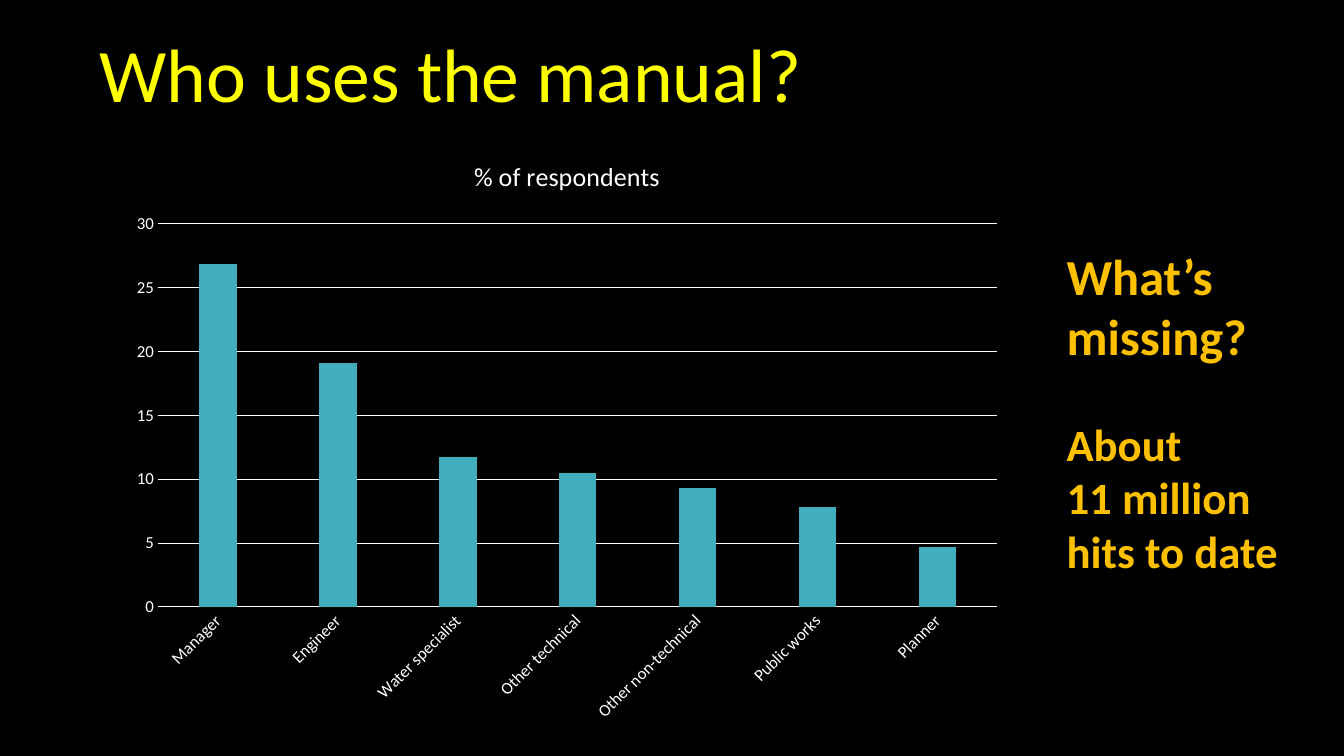
from pptx import Presentation
from pptx.chart.data import CategoryChartData
from pptx.dml.color import RGBColor
from pptx.enum import chart as kinds, text
from pptx.util import Inches, Pt

BLACK = RGBColor(0x00, 0x00, 0x00)
WHITE = RGBColor(0xFF, 0xFF, 0xFF)
YELLOW = RGBColor(0xFF, 0xFF, 0x00)
AMBER = RGBColor(0xFF, 0xC0, 0x00)
TEAL = RGBColor(0x41, 0xAE, 0xBD)

USERS = {
    "Manager": 26.8,
    "Engineer": 19.1,
    "Water specialist": 11.7,
    "Other technical": 10.5,
    "Other non-technical": 9.3,
    "Public works": 7.8,
    "Planner": 4.7,
}


class Deck:
    """Holds the font and the current slide, and adds styled elements."""

    def __init__(self, face):
        self.face = face
        self.show = Presentation()
        self.show.slide_width = Inches(13.33)
        self.show.slide_height = Inches(7.5)
        self.slide = self.show.slides.add_slide(self.show.slide_layouts[6])
        fill = self.slide.background.fill
        fill.solid()
        fill.fore_color.rgb = BLACK

    def style(self, font, size, color, bold=False):
        font.name = self.face
        font.size = Pt(size)
        font.color.rgb = color
        font.bold = bold

    def label(self, box, lines, size, color, bold=False,
              anchor=text.MSO_ANCHOR.TOP, space=1.0):
        frame = self.slide.shapes.add_textbox(*map(Inches, box)).text_frame
        frame.word_wrap = True
        frame.vertical_anchor = anchor
        frame.text = "\n".join(lines)
        for para in frame.paragraphs:
            para.line_spacing = space
            self.style(para.font, size, color, bold)

    def axis(self, axis, line):
        axis.major_tick_mark = kinds.XL_TICK_MARK.NONE
        axis.minor_tick_mark = kinds.XL_TICK_MARK.NONE
        self.style(axis.tick_labels.font, 12, WHITE)
        if line:
            self.stroke(axis.format.line)
        else:
            axis.format.line.fill.background()

    def stroke(self, line):
        line.color.rgb = WHITE
        line.width = Pt(0.75)

    def columns(self, box, name, values):
        data = CategoryChartData(number_format="General")
        data.categories = list(values)
        data.add_series(name, list(values.values()))
        chart = self.slide.shapes.add_chart(
            kinds.XL_CHART_TYPE.COLUMN_CLUSTERED, *map(Inches, box), data).chart
        self.style(chart.font, 10, WHITE)
        chart.has_legend = False
        chart.has_title = True
        frame = chart.chart_title.text_frame
        frame.text = name
        self.style(frame.paragraphs[0].font, 18.6, WHITE)
        chart.chart_title.include_in_layout = False

        plot = chart.plots[0]
        plot.gap_width = 219
        plot.overlap = -27
        plot.vary_by_categories = False
        fill = plot.series[0].format.fill
        fill.solid()
        fill.fore_color.rgb = TEAL

        cats, vals = chart.category_axis, chart.value_axis
        self.axis(cats, True)
        cats._element.txPr.bodyPr.set("rot", "-2700000")
        self.axis(vals, False)
        vals.minimum_scale = 0
        vals.maximum_scale = 30
        vals.major_unit = 5
        self.stroke(vals.major_gridlines.format.line)


def main():
    deck = Deck("Calibri")
    deck.label((0.89, 0.2, 11.5, 1.15), ["Who uses the manual?"], 54, YELLOW,
               anchor=text.MSO_ANCHOR.MIDDLE, space=0.9)
    deck.columns((1.18, 1.35, 8.89, 5.93), "% of respondents", USERS)
    deck.label((10.48, 2.38, 2.42, 1.31), ["What’s missing?"], 36, AMBER, True)
    deck.label((10.48, 4.08, 2.42, 1.72), ["About", "11 million hits to date"],
               32, AMBER, True)
    deck.show.save("out.pptx")


if __name__ == "__main__":
    main()
